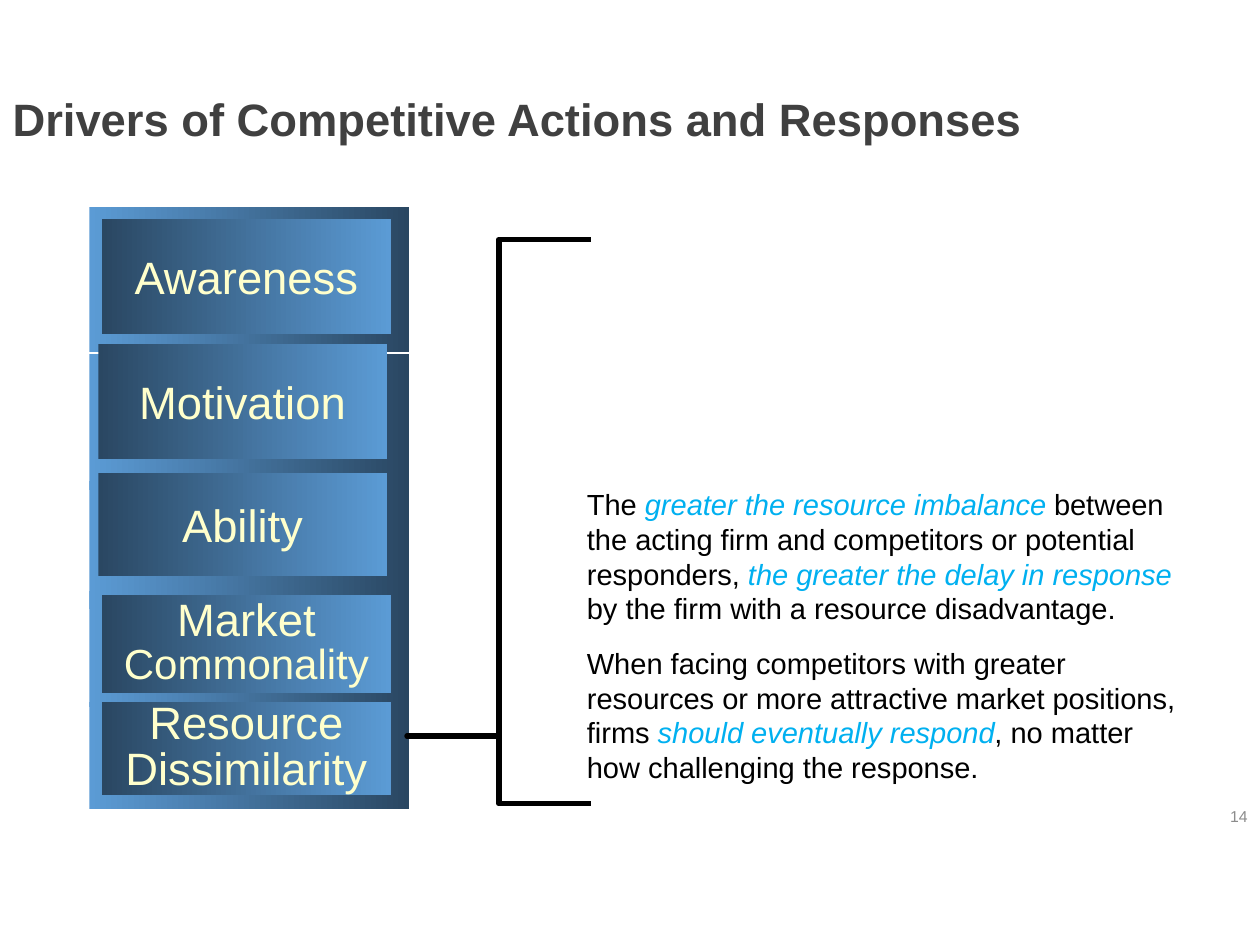
import pptx
import pptx.util
import pptx.dml.color
import pptx.enum.shapes
import pptx.enum.text

Inches, Pt = pptx.util.Inches, pptx.util.Pt
RGBColor = pptx.dml.color.RGBColor
MSO_SHAPE = pptx.enum.shapes.MSO_SHAPE
ANCHOR, ALIGN = pptx.enum.text.MSO_ANCHOR, pptx.enum.text.PP_ALIGN

BLUE = RGBColor(0x5B, 0x9B, 0xD5)
NAVY = RGBColor(0x2A, 0x47, 0x62)
CREAM = RGBColor(0xFF, 0xFF, 0xCC)
CHARCOAL = RGBColor(0x40, 0x40, 0x40)
GRAY = RGBColor(0x8C, 0x8C, 0x8C)
BLACK = RGBColor(0, 0, 0)
ACCENT = RGBColor(0x00, 0xB0, 0xF0)

FONT = "Arial"
LARGE, BODY = 25.9, 16.6
TITLE = "Drivers of Competitive Actions and Responses"
PAGE_NUMBER = "14"

PANEL_LEFT, PANEL_WIDTH, LABEL_WIDTH = 0.71, 2.54, 2.29
WIDE, NARROW = 0.1, 0.07
DRIVERS = [
    ([("Awareness", LARGE)], (1.64, 1.15), (1.74, 0.91), WIDE, 1),
    ([("Motivation", LARGE)], (2.81, 1.08), (2.73, 0.91), NARROW, 1),
    ([("Ability", LARGE)], (3.82, 1.01), (3.75, 0.82), NARROW, 1),
    ([("Market ", LARGE), ("Commonality", 24)], (4.69, 0.92), (4.72, 0.78), WIDE, 0.85),
    ([("Resource Dissimilarity", LARGE)], (5.57, 0.85), (5.57, 0.74), WIDE, 0.85),
]

FINDINGS = [
    [
        ("The ", False),
        ("greater the resource imbalance ", True),
        ("between the acting firm and competitors or potential responders, ", False),
        ("the greater the delay in response ", True),
        ("by the firm with a resource disadvantage.", False),
    ],
    [
        ("When facing competitors with greater resources or more attractive "
         "market positions, firms ", False),
        ("should eventually respond", True),
        (", no matter how challenging the response.", False),
    ],
]


def add_span(para, text, size, color, bold=False, italic=False):
    span = para.add_run()
    span.text = text
    span.font.name = FONT
    span.font.size = Pt(size)
    span.font.color.rgb = color
    span.font.bold = bold
    span.font.italic = italic


def add_textbox(page, *place):
    frame = page.shapes.add_textbox(*map(Inches, place)).text_frame
    frame.word_wrap = True
    return frame


def add_gradient_box(group, place, colors):
    box = group.shapes.add_shape(MSO_SHAPE.RECTANGLE, *map(Inches, place))
    box.shadow.inherit = False
    box.line.fill.background()
    box.fill.gradient()
    box.fill.gradient_angle = 0
    for stop, color in zip(box.fill.gradient_stops, colors):
        stop.color.rgb = color
    return box


def add_driver(page, spans, panel, label, inset, spacing):
    group = page.shapes.add_group_shape()
    add_gradient_box(group, (PANEL_LEFT, panel[0], PANEL_WIDTH, panel[1]), (BLUE, NAVY))
    box = add_gradient_box(
        group, (PANEL_LEFT + inset, label[0], LABEL_WIDTH, label[1]), (NAVY, BLUE))
    box.text_frame.word_wrap = True
    box.text_frame.vertical_anchor = ANCHOR.MIDDLE
    para = box.text_frame.paragraphs[0]
    para.alignment = ALIGN.CENTER
    para.line_spacing = spacing
    for text, size in spans:
        add_span(para, text, size, CREAM)


def main():
    deck = pptx.Presentation()
    deck.slide_width, deck.slide_height = Inches(10), Inches(7.5)
    page = deck.slides.add_slide(deck.slide_layouts[5])

    title = page.shapes.title
    title.left, title.top, title.width, title.height = map(Inches, (0, 0.7, 8.5, 0.54))
    title.text_frame.vertical_anchor = ANCHOR.MIDDLE
    para = title.text_frame.paragraphs[0]
    para.alignment = ALIGN.LEFT
    para.line_spacing = 0.9
    add_span(para, TITLE, LARGE, CHARCOAL, bold=True)

    frame = add_textbox(page, 9.51, 6.34, 0.49, 0.27)
    frame.vertical_anchor = ANCHOR.MIDDLE
    frame.paragraphs[0].alignment = ALIGN.RIGHT
    add_span(frame.paragraphs[0], PAGE_NUMBER, 9, GRAY)

    for driver in DRIVERS:
        add_driver(page, *driver)

    brace = page.shapes.add_shape(
        MSO_SHAPE.LEFT_BRACE, *map(Inches, (3.23, 1.9, 1.46, 4.48)))
    brace.adjustments[0], brace.adjustments[1] = 0, 0.88
    brace.shadow.inherit = False
    brace.fill.background()
    brace.line.color.rgb = BLACK
    brace.line.width = Pt(3)

    frame = add_textbox(page, 4.56, 3.81, 5, 2.49)
    for index, spans in enumerate(FINDINGS):
        para = frame.add_paragraph() if index else frame.paragraphs[0]
        para.space_after = Pt(11.1)
        for text, stressed in spans:
            add_span(para, text, BODY, ACCENT if stressed else BLACK, italic=stressed)

    deck.save("out.pptx")


if __name__ == "__main__":
    main()
